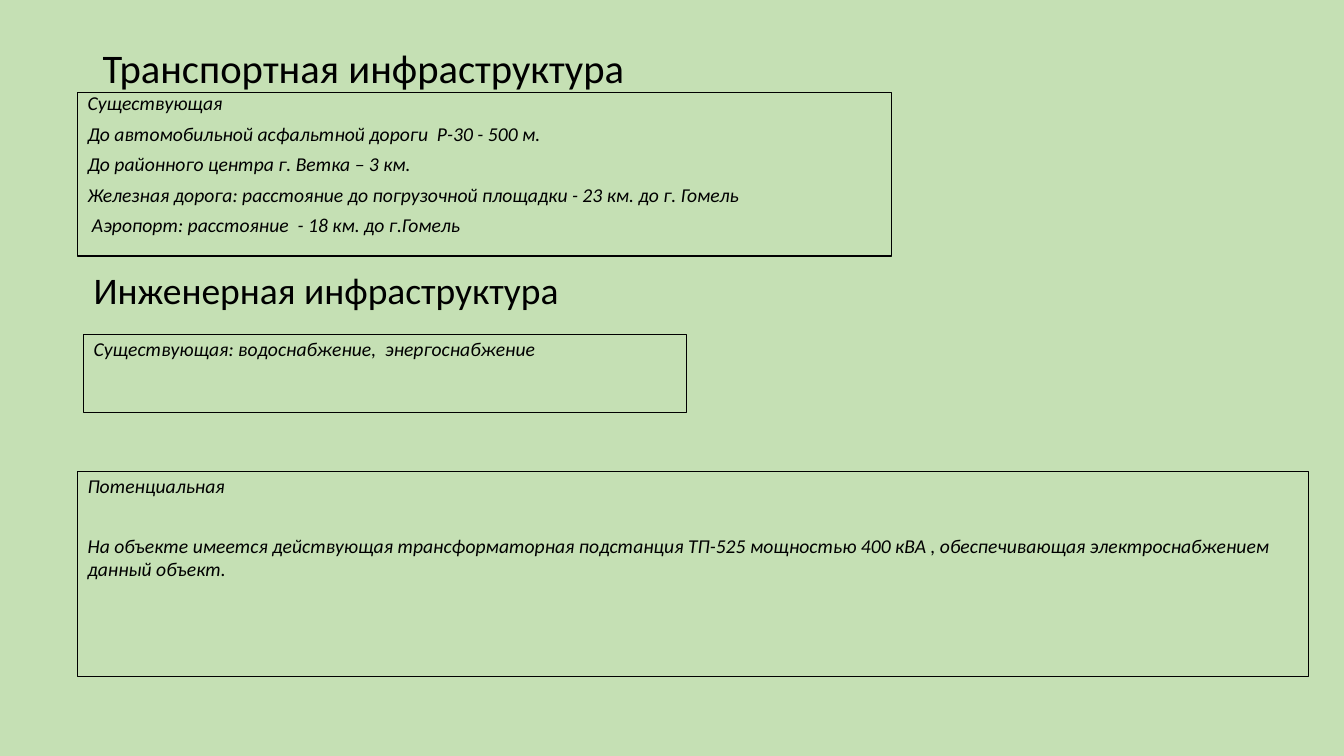
"""Build a slide on the transport and engineering infrastructure of a site."""
from pptx import Presentation
from pptx.dml.color import RGBColor
from pptx.enum.shapes import MSO_SHAPE
from pptx.enum.text import MSO_ANCHOR, PP_ALIGN
from pptx.util import Inches, Pt

BACKGROUND, INK, FONT = "C5E0B4", "000000", "Calibri"

HEADINGS = [
    ("Транспортная инфраструктура", (0.92, 0.4, 11.5, 0.59), 29, 0.9),
    ("Инженерная инфраструктура", (0.83, 2.68, 11.5, 0.47), 26.8, 0.8),
]

TRANSPORT = [
    "Существующая",
    "До автомобильной асфальтной дороги  Р-30 - 500 м.",
    "До районного центра г. Ветка – 3 км.",
    "Железная дорога: расстояние до погрузочной площадки - 23 км. до г. Гомель",
    " Аэропорт: расстояние  - 18 км. до г.Гомель",
]
UTILITIES = ["Существующая: водоснабжение,  энергоснабжение"]
POTENTIAL = [
    "Потенциальная",
    "На объекте имеется действующая трансформаторная подстанция ТП-525 мощностью "
    "400 кВА , обеспечивающая электроснабжением данный объект.",
]

# (lines, box, line spacing of each paragraph, space before each paragraph)
PANELS = [
    (TRANSPORT, (0.77, 0.92, 8.07, 1.62), [0.7] * 5, [10] * 5),
    (UTILITIES, (0.83, 3.32, 5.98, 0.77), [0.9], [10]),
    (POTENTIAL, (0.77, 4.68, 12.21, 2.03), [0.9, 1.0], [10, 25.4]),
]


def color(value):
    return RGBColor.from_string(value)


def write(sp, lines, size, spacings, gaps, anchor, italic=False):
    tf = sp.text_frame
    tf.word_wrap = True
    tf.vertical_anchor = anchor
    tf.text = "\n".join(lines)
    for p, spacing, gap in zip(tf.paragraphs, spacings, gaps):
        p.alignment = PP_ALIGN.LEFT
        p.line_spacing = spacing
        p.space_before = Pt(gap)
        for r in p.runs:
            r.font.name, r.font.size, r.font.italic = FONT, Pt(size), italic
            r.font.color.rgb = color(INK)


def add_heading(slide, text, box, size, spacing):
    sp = slide.shapes.add_textbox(*map(Inches, box))
    write(sp, [text], size, [spacing], [0], MSO_ANCHOR.MIDDLE)


def add_panel(slide, lines, box, spacings, gaps):
    sp = slide.shapes.add_shape(MSO_SHAPE.RECTANGLE, *map(Inches, box))
    sp.shadow.inherit = False
    sp.fill.background()
    sp.line.color.rgb = color(INK)
    sp.line.width = Pt(0.75)
    write(sp, lines, 14, spacings, gaps, MSO_ANCHOR.TOP, italic=True)


def main():
    prs = Presentation()
    prs.slide_width, prs.slide_height = Inches(13.33), Inches(7.5)
    slide = prs.slides.add_slide(prs.slide_layouts[6])
    fill = slide.background.fill
    fill.solid()
    fill.fore_color.rgb = color(BACKGROUND)
    for heading in HEADINGS:
        add_heading(slide, *heading)
    for panel in PANELS:
        add_panel(slide, *panel)
    prs.save("out.pptx")


if __name__ == "__main__":
    main()
